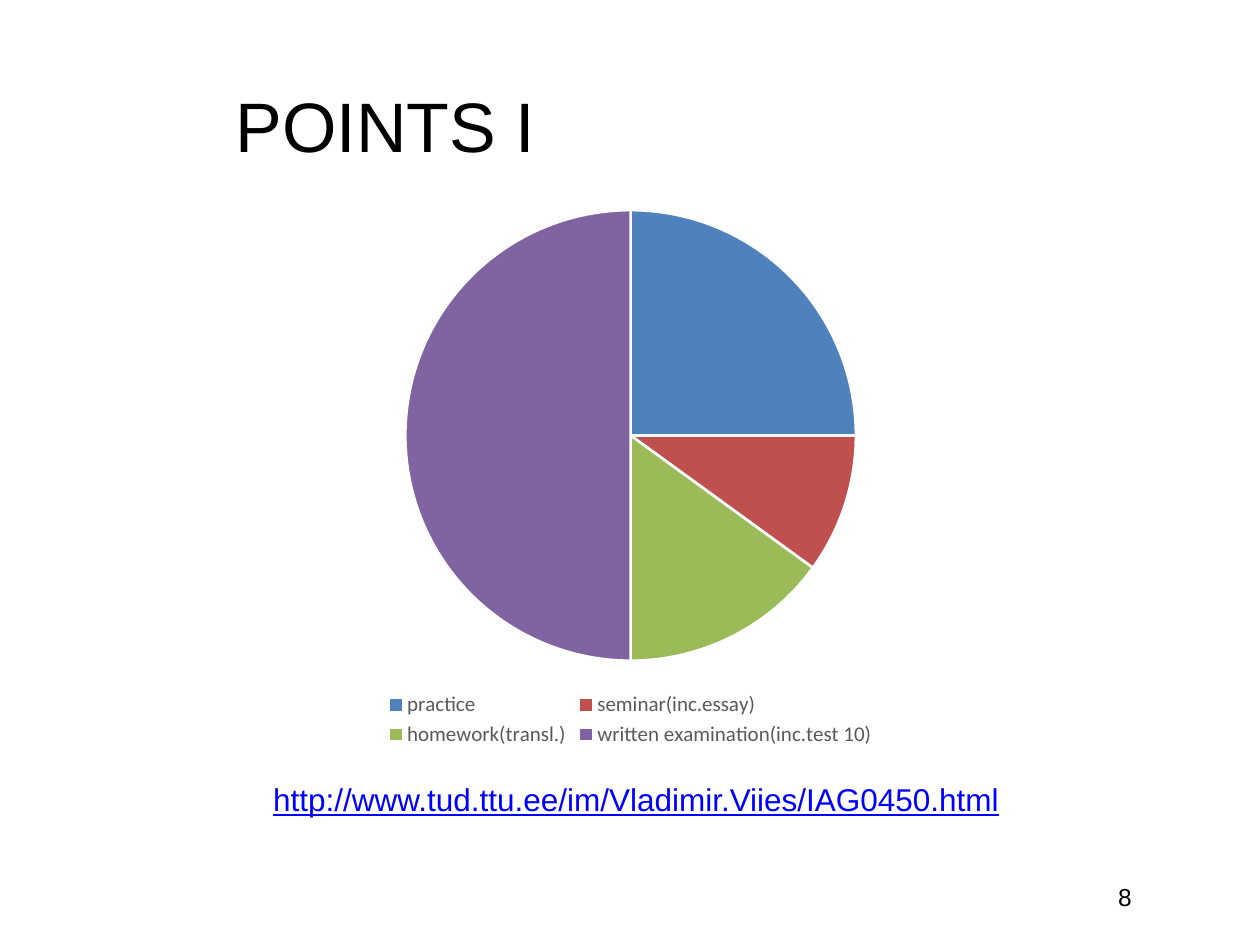
from pptx import Presentation
from pptx.chart.data import CategoryChartData
from pptx.dml.color import RGBColor
from pptx.enum.chart import XL_CHART_TYPE, XL_LEGEND_POSITION
from pptx.enum.text import MSO_ANCHOR, PP_ALIGN
from pptx.util import Inches, Pt

COLORS = {
    "text": "000000",
    "link": "0000FF",
    "legend": "595959",
    "border": "FFFFFF",
    "practice": "4F81BD",
    "seminar": "C0504D",
    "homework": "9BBB59",
    "exam": "8064A2",
}
POINTS = [
    ("practice", 25, "practice"),
    ("seminar(inc.essay)", 10, "seminar"),
    ("homework(transl.)", 15, "homework"),
    ("written examination(inc.test 10)", 50, "exam"),
]


def rgb(name):
    return RGBColor.from_string(COLORS[name])


def set_font(font, name, size, color):
    font.name = name
    font.size = Pt(size)
    font.color.rgb = rgb(color)


def add_run(p, text, size, color="text", align=PP_ALIGN.LEFT):
    p.alignment = align
    r = p.add_run()
    r.text = text
    set_font(r.font, "Arial", size, color)
    return r


def set_title(s, text, left, top, width, height):
    sp = s.shapes.title
    sp.left, sp.top = Inches(left), Inches(top)
    sp.width, sp.height = Inches(width), Inches(height)
    tf = sp.text_frame
    tf.vertical_anchor = MSO_ANCHOR.MIDDLE
    tf.margin_left = Inches(0.25)
    add_run(tf.paragraphs[0], text, 40)


def add_text(s, text, left, top, width, height, size, color="text", align=PP_ALIGN.LEFT):
    sp = s.shapes.add_textbox(Inches(left), Inches(top), Inches(width), Inches(height))
    tf = sp.text_frame
    tf.word_wrap = True
    return add_run(tf.paragraphs[0], text, size, color, align)


def add_points_pie(s, left, top, width, height):
    data = CategoryChartData()
    data.categories = [label for label, _, _ in POINTS]
    data.add_series("Series 1", [value for _, value, _ in POINTS])
    chart = s.shapes.add_chart(
        XL_CHART_TYPE.PIE, Inches(left), Inches(top), Inches(width), Inches(height), data
    ).chart
    chart.has_title = False
    set_font(chart.font, "Calibri", 10, "text")
    chart.has_legend = True
    chart.legend.position = XL_LEGEND_POSITION.BOTTOM
    chart.legend.include_in_layout = False
    set_font(chart.legend.font, "Calibri", 12, "legend")
    plot = chart.plots[0]
    plot.vary_by_categories = True
    for i, (_, _, color) in enumerate(POINTS):
        fmt = plot.series[0].points[i].format
        fmt.fill.solid()
        fmt.fill.fore_color.rgb = rgb(color)
        fmt.line.color.rgb = rgb("border")
        fmt.line.width = Pt(1.5)


def main():
    prs = Presentation()
    prs.slide_width, prs.slide_height = Inches(10), Inches(7.5)
    s = prs.slides.add_slide(prs.slide_layouts[5])
    set_title(s, "POINTS I", 1.62, 0.36, 7.44, 1.26)
    add_text(s, "8", 8.23, 6.95, 0.85, 0.4, 14, align=PP_ALIGN.RIGHT)
    add_points_pie(s, 1.67, 1.53, 6.67, 4.44)
    r = add_text(
        s, "http://www.tud.ttu.ee/im/Vladimir.Viies/IAG0450.html", 2.07, 6.14, 6.54, 0.71, 18, "link"
    )
    r.font.underline = True
    prs.save("out.pptx")


if __name__ == "__main__":
    main()
